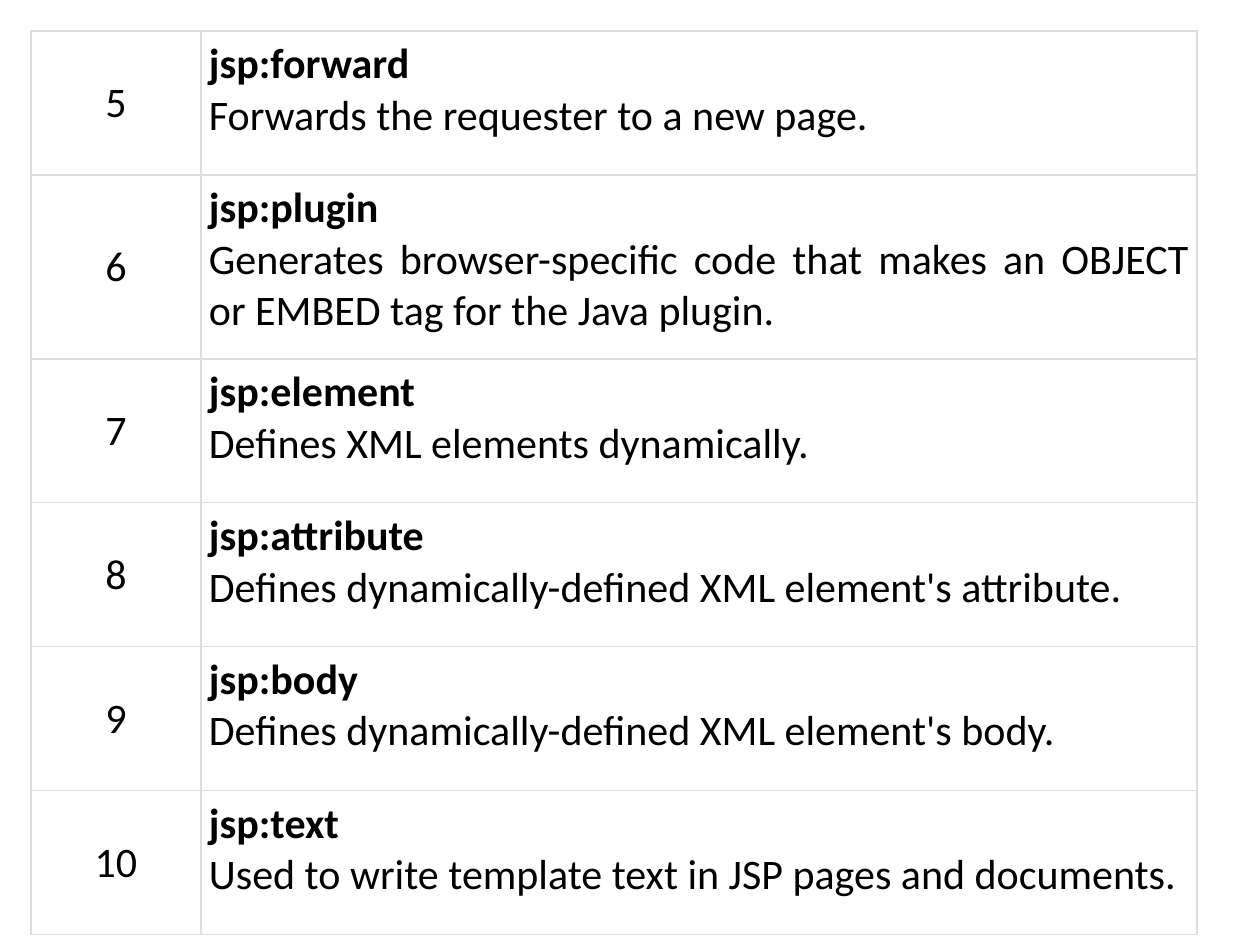
from lxml.etree import SubElement
from pptx import Presentation
from pptx.dml.color import RGBColor
from pptx.enum.text import MSO_ANCHOR as Anchor, PP_ALIGN as Align
from pptx.oxml.ns import qn
from pptx.util import Emu, Pt

PX_PER_INCH = 126
COLORS = {"text": "000000", "border": "DDDDDD"}
FONT = "Calibri"
FIRST_NUMBER = 5
COLUMN_WIDTHS = (170, 996)
ROW_HEIGHT, TALL_ROW_HEIGHT = 144, 184
ACTIONS = [
    ("jsp:forward", "Forwards the requester to a new page.", ROW_HEIGHT),
    ("jsp:plugin",
     "Generates browser-specific code that makes an OBJECT or EMBED tag for the Java plugin.",
     TALL_ROW_HEIGHT),
    ("jsp:element", "Defines XML elements dynamically.", ROW_HEIGHT),
    ("jsp:attribute", "Defines dynamically-defined XML element's attribute.", ROW_HEIGHT),
    ("jsp:body", "Defines dynamically-defined XML element's body.", ROW_HEIGHT),
    ("jsp:text", "Used to write template text in JSP pages and documents.", ROW_HEIGHT),
]


def px(length):
    return Emu(round(length * 914400 / PX_PER_INCH))


def add_borders(cell):
    properties = cell._tc.get_or_add_tcPr()
    for side in ("lnL", "lnR", "lnT", "lnB"):
        line = SubElement(properties, qn(f"a:{side}"), w=str(Pt(0.75)))
        fill = SubElement(line, qn("a:solidFill"))
        SubElement(fill, qn("a:srgbClr"), val=COLORS["border"])


def fill_cell(cell, lines, alignment, anchor):
    """Write (text, bold) lines, one paragraph each, into a bordered cell."""
    add_borders(cell)
    cell.fill.background()
    cell.vertical_anchor = anchor
    cell.margin_left = cell.margin_right = px(8)
    cell.margin_top = cell.margin_bottom = px(8)
    cell.text = "\n".join(text for text, _ in lines)
    for paragraph, (_, bold) in zip(cell.text_frame.paragraphs, lines):
        paragraph.alignment = alignment
        font = paragraph.font
        font.name, font.size, font.bold = FONT, Pt(24), bold
        font.color.rgb = RGBColor.from_string(COLORS["text"])


def add_action_table(slide, left, top):
    height = sum(row_height for _, _, row_height in ACTIONS)
    table = slide.shapes.add_table(
        len(ACTIONS), len(COLUMN_WIDTHS),
        px(left), px(top), px(sum(COLUMN_WIDTHS)), px(height)).table
    table.first_row = table.horz_banding = False
    for column, width in zip(table.columns, COLUMN_WIDTHS):
        column.width = px(width)
    for index, (name, description, row_height) in enumerate(ACTIONS):
        table.rows[index].height = px(row_height)
        number = str(FIRST_NUMBER + index)
        fill_cell(table.cell(index, 0), [(number, False)], Align.CENTER, Anchor.MIDDLE)
        fill_cell(table.cell(index, 1), [(name, True), (description, False)],
                  Align.JUSTIFY, Anchor.TOP)


def main():
    presentation = Presentation()
    presentation.slide_width, presentation.slide_height = px(1260), px(945)
    slide = presentation.slides.add_slide(presentation.slide_layouts[6])
    add_action_table(slide, 31, 31)
    presentation.save("out.pptx")


if __name__ == "__main__":
    main()
